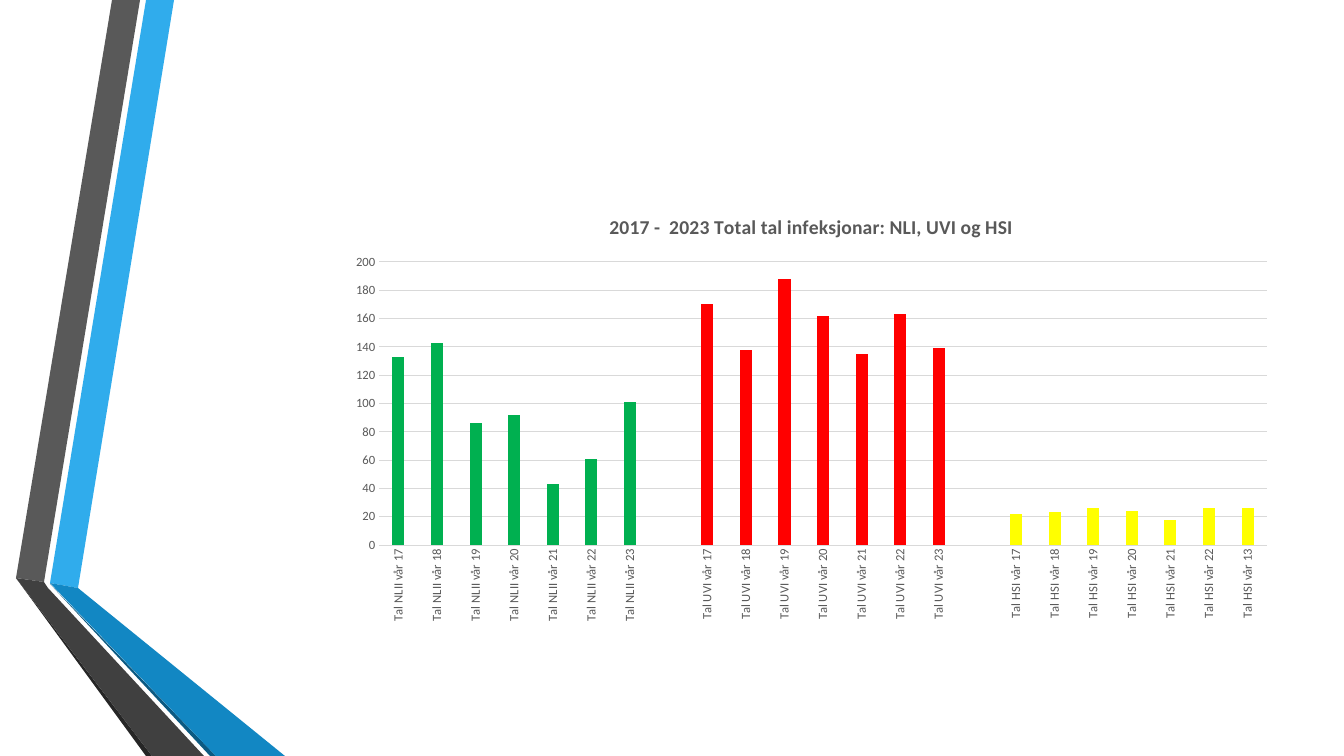
"""Build a slide with a column chart of infection counts beside a folded ribbon."""
import pptx
import pptx.chart.data
import pptx.dml.color
import pptx.enum.chart
import pptx.util

SLIDE = (1344, 756)
EMU_PER_PX = 12192000 / SLIDE[0]
COLORS = {
    "sky": "30ACEC", "gray": "595959", "black": "262626", "navy": "0C5A82",
    "blue": "1287C3", "charcoal": "404040", "grid": "D9D9D9",
    "green": "00B050", "red": "FF0000", "yellow": "FFFF00",
}
RIBBONS = [
    ("sky", [(50, 583), (78, 588), (174, 0), (146, 0)]),
    ("gray", [(140, 0), (112, 0), (16, 578), (44, 582)]),
    ("black", [(16, 578), (146, 756), (152, 756)]),
    ("navy", [(50, 584), (210, 756), (216, 756)]),
    ("blue", [(50, 583), (216, 756), (285, 756), (78, 588)]),
    ("charcoal", [(204, 756), (48, 588), (44, 582), (16, 578), (152, 756)]),
]
TITLE = "2017 -  2023 Total tal infeksjonar: NLI, UVI og HSI"
INFECTIONS = [
    ("NLII", "green", (17, 18, 19, 20, 21, 22, 23), (133, 143, 86, 92, 43, 61, 101)),
    ("UVI", "red", (17, 18, 19, 20, 21, 22, 23), (170, 138, 188, 162, 135, 163, 139)),
    ("HSI", "yellow", (17, 18, 19, 20, 21, 22, 13), (22, 23, 26, 24, 18, 26, 26)),
]
CHART_BOX = (337, 196, 949, 434)
QUARTER_TURN_LEFT = "-5400000"


def px(length):
    return pptx.util.Emu(round(length * EMU_PER_PX))


def rgb(name):
    return pptx.dml.color.RGBColor.from_string(COLORS[name])


def paint(fill, name):
    fill.solid()
    fill.fore_color.rgb = rgb(name)


def style_font(font, size, bold=False):
    font.name = "Calibri"
    font.size = pptx.util.Pt(size)
    font.bold = bold
    font.color.rgb = rgb("gray")


def style_line(line):
    line.color.rgb = rgb("grid")
    line.width = pptx.util.Pt(0.75)


def add_ribbon(slide, color, points):
    builder = slide.shapes.build_freeform(*points[0], scale=EMU_PER_PX)
    builder.add_line_segments(points[1:], close=True)
    ribbon = builder.convert_to_shape()
    ribbon.shadow.inherit = False
    paint(ribbon.fill, color)
    ribbon.line.fill.background()


def add_infection_chart(slide):
    bars = []
    for infection, color, years, counts in INFECTIONS:
        if bars:
            bars.append(("", None, None))
        bars += [(f"Tal {infection} vår {year}", count, color)
                 for year, count in zip(years, counts)]
    data = pptx.chart.data.CategoryChartData()
    data.categories = [label for label, _, _ in bars]
    data.add_series("Series 1", [count for _, count, _ in bars])
    chart = slide.shapes.add_chart(
        pptx.enum.chart.XL_CHART_TYPE.COLUMN_CLUSTERED, *map(px, CHART_BOX), data).chart
    chart.has_legend = False
    chart.font.name = "Calibri"
    chart.font.size = pptx.util.Pt(10)

    chart.has_title = True
    title = chart.chart_title.text_frame.paragraphs[0].add_run()
    title.text = TITLE
    style_font(title.font, 14, bold=True)
    chart.chart_title.include_in_layout = False

    plot = chart.plots[0]
    plot.gap_width = 219
    plot.overlap = -27
    plot.vary_by_categories = False
    series = plot.series[0]
    paint(series.format.fill, "sky")
    series.invert_if_negative = False
    for index, (_, _, color) in enumerate(bars):
        if color:
            paint(series.points[index].format.fill, color)

    for axis in (chart.category_axis, chart.value_axis):
        axis.major_tick_mark = pptx.enum.chart.XL_TICK_MARK.NONE
        axis.minor_tick_mark = pptx.enum.chart.XL_TICK_MARK.NONE
        style_font(axis.tick_labels.font, 9)
    style_line(chart.category_axis.format.line)
    label_body = chart.category_axis._element.txPr.bodyPr
    label_body.set("rot", QUARTER_TURN_LEFT)
    label_body.set("vert", "horz")
    counts_axis = chart.value_axis
    counts_axis.format.line.fill.background()
    counts_axis.minimum_scale = 0
    counts_axis.maximum_scale = 200
    counts_axis.major_unit = 20
    style_line(counts_axis.major_gridlines.format.line)


def main():
    deck = pptx.Presentation()
    deck.slide_width, deck.slide_height = map(px, SLIDE)
    slide = deck.slides.add_slide(deck.slide_layouts[6])
    for color, points in RIBBONS:
        add_ribbon(slide, color, points)
    add_infection_chart(slide)
    deck.save("out.pptx")


if __name__ == "__main__":
    main()
